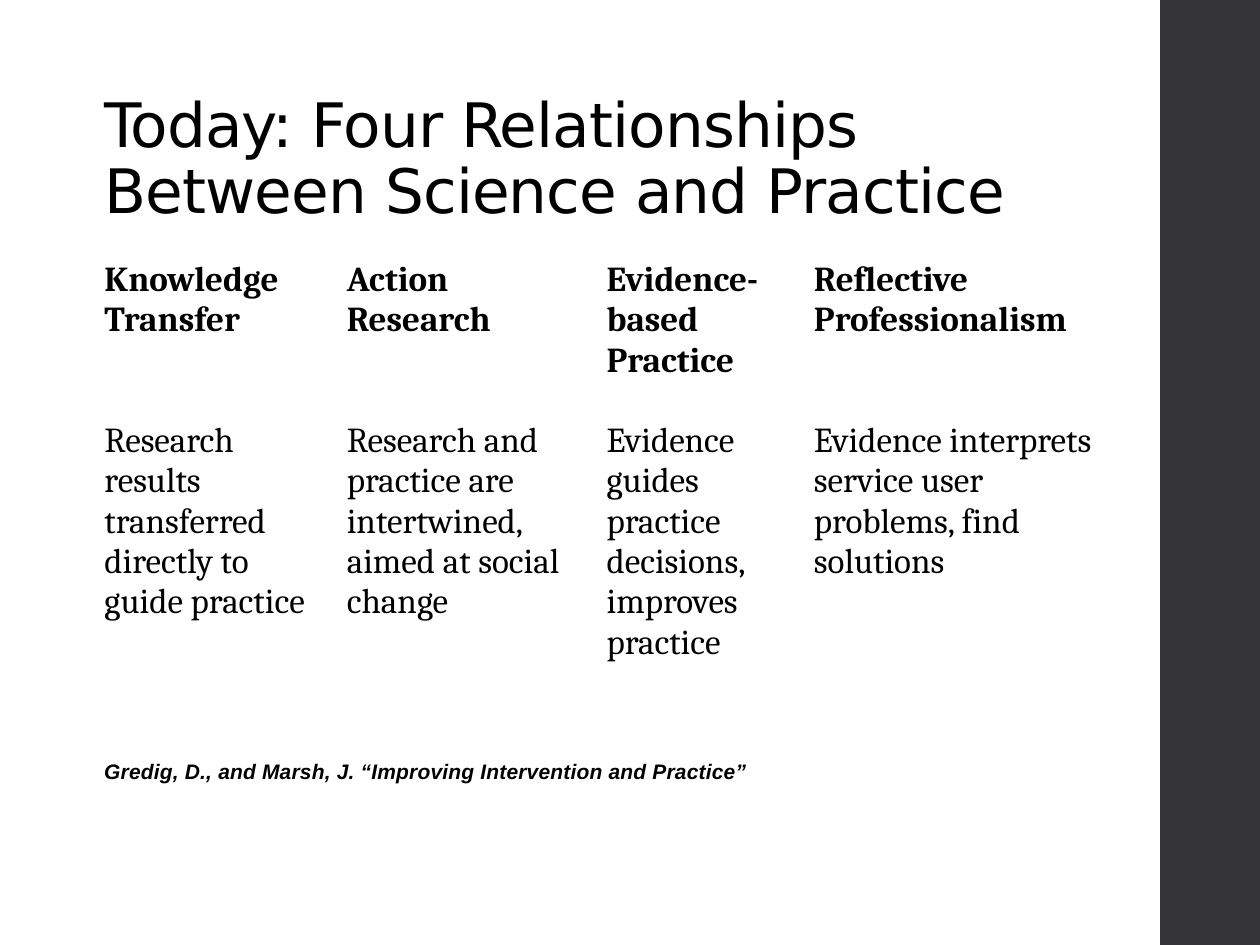
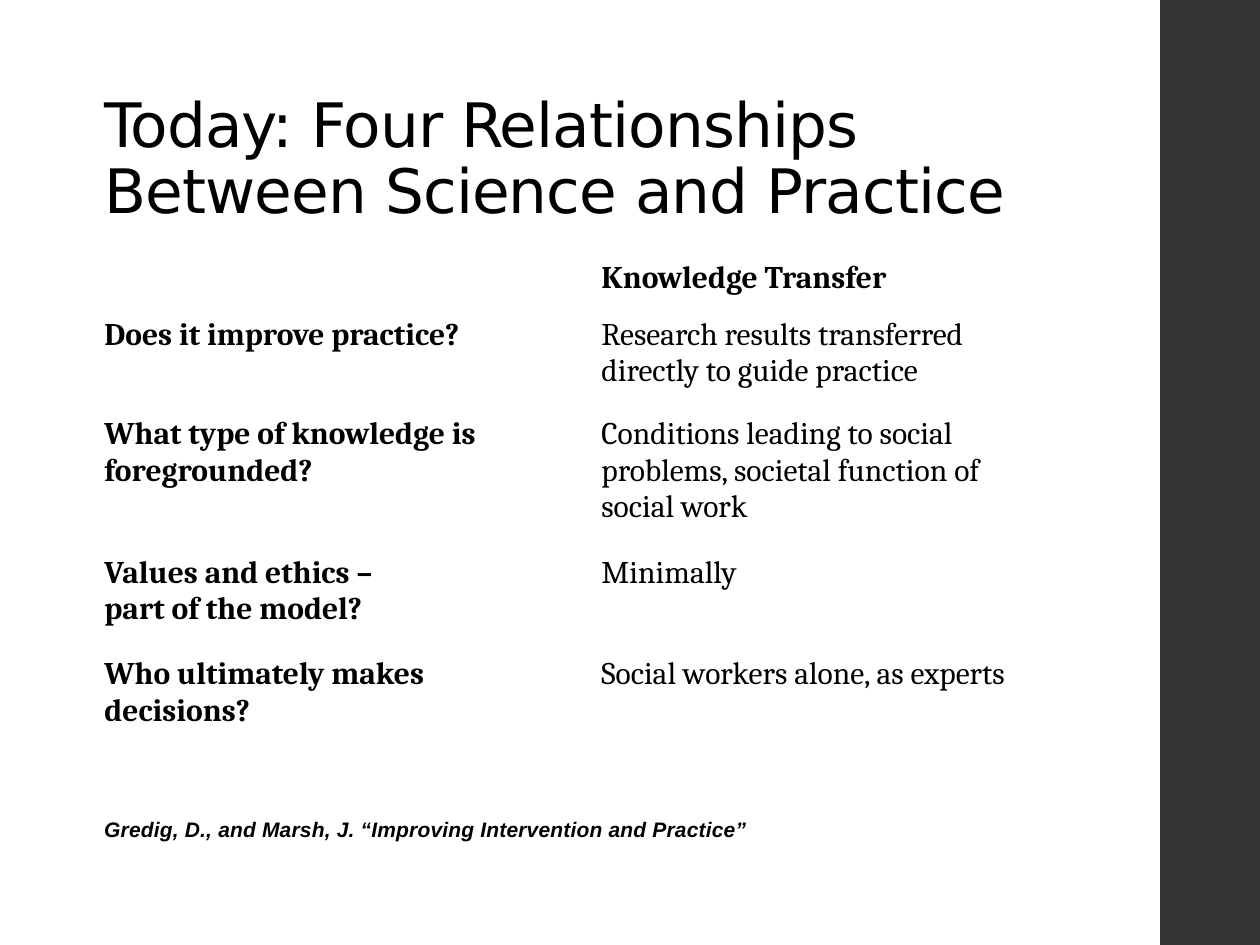
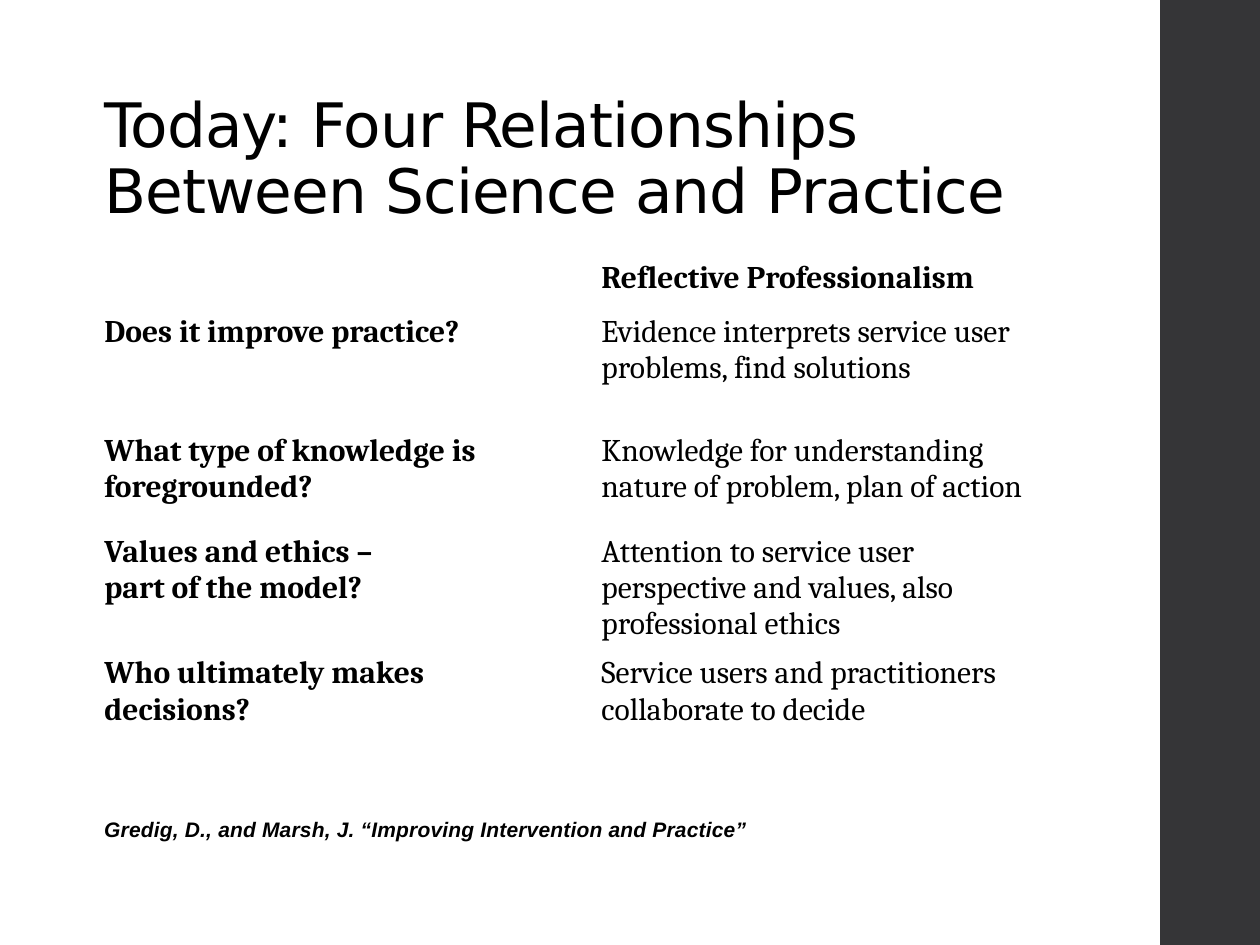
"""Build three slides on four relationships between science and practice."""
from pptx import Presentation
from pptx.dml.color import RGBColor
from pptx.enum.shapes import MSO_SHAPE
from pptx.enum.text import MSO_ANCHOR, MSO_AUTO_SIZE, PP_ALIGN
from pptx.util import Pt

BLACK = RGBColor(0x00, 0x00, 0x00)
CHARCOAL = RGBColor(0x35, 0x35, 0x37)
TITLE_FONT, TABLE_FONT, CITATION_FONT = "DejaVu Sans", "Cambria", "Arial"
LEFT = 52.5
TABLE_TOP = 145

TITLE = "Today: Four Relationships Between Science and Practice"
CITATION = "Gredig, D., and Marsh, J. “Improving Intervention and Practice”"
RELATIONSHIPS = [
    ["Knowledge\nTransfer", "Action\nResearch", "Evidence-based Practice",
     "Reflective Professionalism"],
    ["Research results transferred directly to guide practice",
     "Research and practice are intertwined, aimed at social change",
     "Evidence guides practice decisions, improves practice",
     "Evidence interprets service user problems, find solutions"],
]
QUESTIONS = [
    "",
    "Does it improve practice?",
    "What type of knowledge is foregrounded?",
    "Values and ethics – \vpart of the model?",
    "Who ultimately makes decisions?",
]
KNOWLEDGE_TRANSFER = [
    "Knowledge Transfer",
    "Research results transferred directly to guide practice",
    "Conditions leading to social problems, societal function of social work",
    "Minimally",
    "Social workers alone, as experts",
]
REFLECTIVE_PROFESSIONALISM = [
    "Reflective Professionalism",
    "Evidence interprets service user problems, find solutions",
    "Knowledge for understanding nature of problem, plan of action",
    "Attention to service user perspective and values, also professional ethics",
    "Service users and practitioners collaborate to decide",
]


def style_paragraph(paragraph, font_name, size, bold=False, italic=False):
    """Give a paragraph its black font."""
    font = paragraph.font
    font.name, font.size = font_name, Pt(size)
    font.bold, font.italic = bold, italic
    font.color.rgb = BLACK


def set_tracking(paragraph, hundredths):
    """Space the letters of a paragraph, in hundredths of a point."""
    for run in paragraph.runs:
        run._r.get_or_add_rPr().set("spc", str(hundredths))


def add_side_band(slide, layout, slide_height):
    """Put the dark right-hand band on the shared layout."""
    band = slide.shapes.add_shape(
        MSO_SHAPE.RECTANGLE, Pt(663), 0, Pt(57.5), slide_height)
    band.shadow.inherit = False
    band.fill.solid()
    band.fill.fore_color.rgb = CHARCOAL
    band.line.fill.background()
    layout.shapes.element.append(band.element)


def add_titled_slide(prs, layout):
    """Add a slide with the common title."""
    slide = prs.slides.add_slide(layout)
    title = slide.shapes.title
    title.left, title.top = Pt(LEFT), Pt(29)
    title.width, title.height = Pt(595), Pt(104.4)
    frame = title.text_frame
    frame.text = TITLE
    frame.auto_size = MSO_AUTO_SIZE.NONE
    frame.vertical_anchor = MSO_ANCHOR.BOTTOM
    paragraph = frame.paragraphs[0]
    paragraph.alignment = PP_ALIGN.LEFT
    paragraph.line_spacing = 0.9
    style_paragraph(paragraph, TITLE_FONT, 35)
    set_tracking(paragraph, -50)
    return slide


def add_citation(slide, top, height):
    """Add the reference line below the table."""
    citation = slide.shapes.add_textbox(Pt(LEFT), Pt(top), Pt(631.5), Pt(height))
    frame = citation.text_frame
    frame.word_wrap = True
    frame.text = CITATION
    paragraph = frame.paragraphs[0]
    paragraph.line_spacing = 1.5
    paragraph.space_before, paragraph.space_after = Pt(14), Pt(2)
    style_paragraph(paragraph, CITATION_FONT, 12, bold=True, italic=True)
    set_tracking(paragraph, 10)


def add_plain_table(slide, texts, widths, heights, size, bold_first_column=False):
    """Add an unfilled table with a bold first row and, if asked, first column."""
    table = slide.shapes.add_table(
        len(heights), len(widths), Pt(LEFT), Pt(TABLE_TOP),
        Pt(sum(widths)), Pt(sum(heights))).table
    table.first_row = table.horz_banding = False
    for column, width in zip(table.columns, widths):
        column.width = Pt(width)
    for row_index, (row, height) in enumerate(zip(table.rows, heights)):
        row.height = Pt(height)
        for column_index, cell in enumerate(row.cells):
            cell.text = texts[row_index][column_index]
            cell.fill.background()
            bold = row_index == 0 or (bold_first_column and column_index == 0)
            for paragraph in cell.text_frame.paragraphs:
                style_paragraph(paragraph, TABLE_FONT, size, bold)


def add_question_slide(prs, layout, answers, heights):
    """Add a slide that answers the four questions for one relationship."""
    slide = add_titled_slide(prs, layout)
    add_plain_table(slide, list(zip(QUESTIONS, answers)), [284, 275], heights,
                    18, bold_first_column=True)
    add_citation(slide, 456, 44.5)


def main():
    """Build and save the presentation."""
    prs = Presentation()
    prs.slide_width, prs.slide_height = Pt(720), Pt(540)
    layout = prs.slide_layouts[5]

    overview = add_titled_slide(prs, layout)
    add_side_band(overview, layout, prs.slide_height)
    add_plain_table(overview, RELATIONSHIPS, [138.5, 148.5, 118.5, 189.5],
                    [92, 158.5], 20)
    add_citation(overview, 422.5, 78)

    add_question_slide(prs, layout, KNOWLEDGE_TRANSFER,
                       [32.5, 57, 79, 58, 57])
    add_question_slide(prs, layout, REFLECTIVE_PROFESSIONALISM,
                       [31, 68, 57.5, 68.5, 53.5])
    prs.save("out.pptx")


if __name__ == "__main__":
    main()
